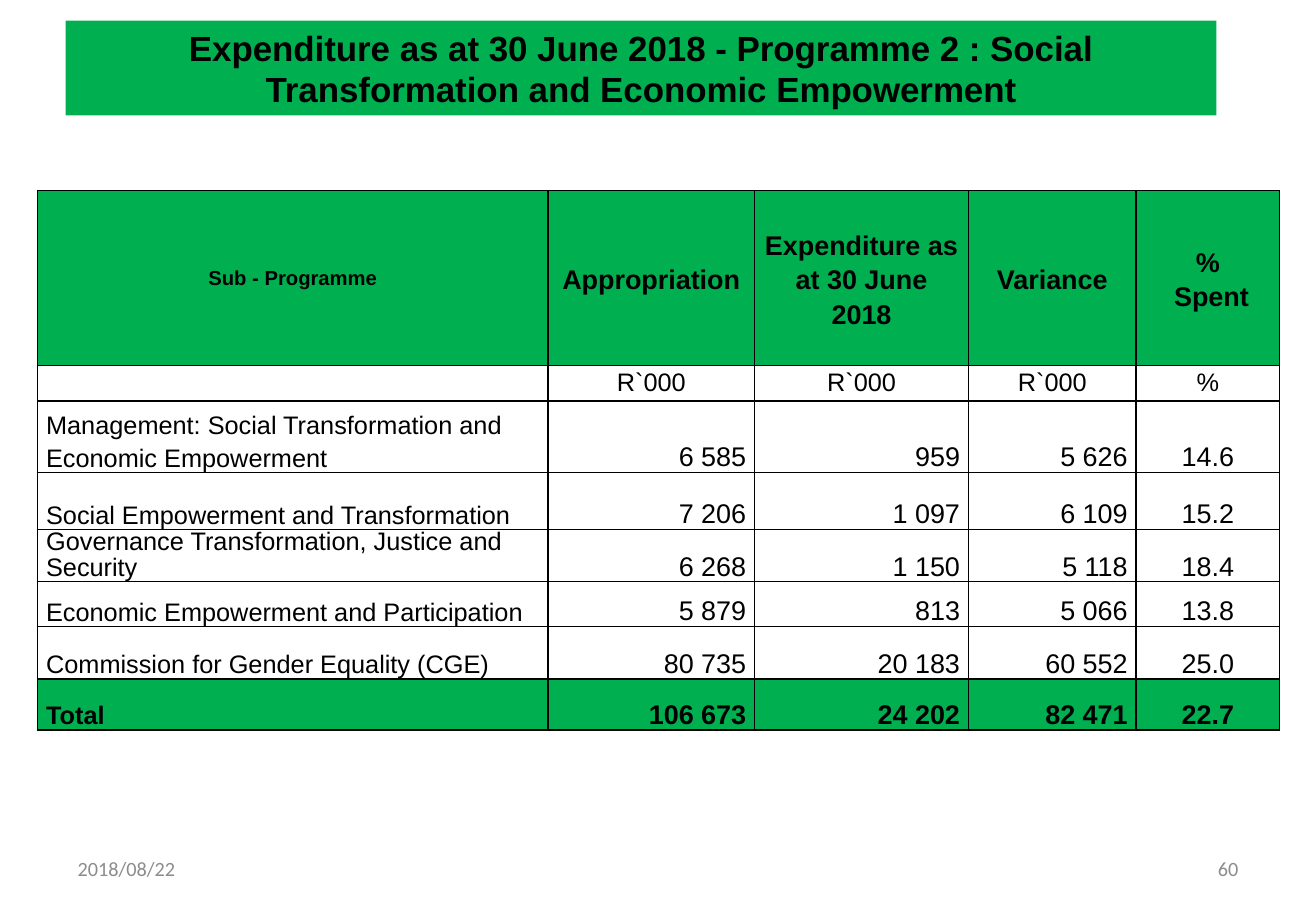
from dataclasses import dataclass
from lxml.etree import SubElement
from pptx import Presentation
from pptx.dml.color import RGBColor
from pptx.enum.text import MSO_ANCHOR, MSO_AUTO_SIZE, PP_ALIGN
from pptx.oxml.ns import qn
from pptx.util import Inches, Pt


@dataclass(frozen=True)
class Theme:
    green: str = "00B050"
    white: str = "FFFFFF"
    black: str = "000000"
    gray: str = "8C8C8C"
    font: str = "Arial"
    foot_font: str = "Calibri"
    title: float = 20.7
    head: float = 16
    label: float = 15
    small: float = 12
    border: float = 1


TITLE = ("Expenditure as at 30 June 2018 - Programme 2 : "
         "Social Transformation and Economic Empowerment")
ROWS = [
    ("Sub - Programme", "Appropriation", "Expenditure as at 30 June 2018", "Variance", "%\n Spent"),
    ("", "R`000", "R`000", "R`000", "%"),
    ("Management: Social Transformation and Economic Empowerment", "6 585", "959", "5 626", "14.6"),
    ("Social Empowerment and Transformation", "7 206", "1 097", "6 109", "15.2"),
    ("Governance Transformation, Justice and Security", "6 268", "1 150", "5 118", "18.4"),
    ("Economic Empowerment and Participation", "5 879", "813", "5 066", "13.8"),
    ("Commission for Gender Equality (CGE)", "80 735", "20 183", "60 552", "25.0"),
    ("Total", "106 673", "24 202", "82 471", "22.7"),
]
WIDTHS = [4.2, 1.7, 1.76, 1.38, 1.18]
HEIGHTS = [1.44, 0.29, 0.59, 0.47, 0.43, 0.37, 0.43, 0.42]
HEAD, UNIT, TOTAL = 0, 1, len(ROWS) - 1
TIGHT = 4


class Deck:
    def __init__(self, theme):
        self.theme = theme
        self.show = Presentation()
        self.show.slide_width = Inches(10.83)
        self.show.slide_height = Inches(7.5)
        self.slide = self.show.slides.add_slide(self.show.slide_layouts[5])

    def place(self, shape, left, top, width, height):
        shape.left, shape.top = Inches(left), Inches(top)
        shape.width, shape.height = Inches(width), Inches(height)

    def paint(self, fill, color):
        fill.solid()
        fill.fore_color.rgb = RGBColor.from_string(color)

    def style(self, frame, size, align, color, font, bold=False, space=None):
        for para in frame.paragraphs:
            para.alignment = align
            para.line_spacing = space
            for run in para.runs:
                run.font.size = Pt(size)
                run.font.name = font
                run.font.bold = bold
                run.font.color.rgb = RGBColor.from_string(color)

    def title(self, text, *box):
        shape = self.slide.shapes.title
        self.place(shape, *box)
        self.paint(shape.fill, self.theme.green)
        frame = shape.text_frame
        frame.text = text
        frame.word_wrap = True
        frame.auto_size = MSO_AUTO_SIZE.NONE
        frame.vertical_anchor = MSO_ANCHOR.MIDDLE
        self.style(frame, self.theme.title, PP_ALIGN.CENTER, self.theme.black, self.theme.font, True)

    def footer(self, text, left, align):
        box = self.slide.shapes.add_textbox(Inches(left), Inches(6.95), Inches(2.53), Inches(0.4))
        frame = box.text_frame
        frame.text = text
        frame.word_wrap = True
        frame.vertical_anchor = MSO_ANCHOR.MIDDLE
        self.style(frame, self.theme.small, align, self.theme.gray, self.theme.foot_font)

    def edge(self, cell):
        props = cell._tc.get_or_add_tcPr()
        for side in ("a:lnL", "a:lnR", "a:lnT", "a:lnB"):
            line = SubElement(props, qn(side), w=str(Pt(self.theme.border)))
            fill = SubElement(line, qn("a:solidFill"))
            SubElement(fill, qn("a:srgbClr"), val=self.theme.black)

    def cell(self, cell, text, row, col):
        theme = self.theme
        top = row <= UNIT
        size = theme.label if row == UNIT or col == 0 else theme.head
        align = PP_ALIGN.CENTER if top or col == 4 else PP_ALIGN.RIGHT
        space = None if row == UNIT else 1.15
        if col == 0:
            if row == HEAD:
                size, space = theme.small, None
            else:
                align = PP_ALIGN.LEFT
                if row >= TIGHT:
                    space = Pt(15.1)
        cell.margin_left = cell.margin_right = Inches(0.07)
        cell.margin_top = Inches(0.01 if col == 0 and not top else 0)
        cell.margin_bottom = 0
        cell.vertical_anchor = MSO_ANCHOR.MIDDLE if top else MSO_ANCHOR.BOTTOM
        frame = cell.text_frame
        frame.text = text
        self.style(frame, size, align, theme.black, theme.font, row in (HEAD, TOTAL), space)
        if not text:
            SubElement(frame.paragraphs[0]._p, qn("a:endParaRPr"), sz=str(int(size * 100)))
        self.edge(cell)
        self.paint(cell.fill, theme.green if row in (HEAD, TOTAL) else theme.white)

    def table(self, rows, widths, heights, left, top):
        frame = self.slide.shapes.add_table(
            len(rows), len(widths), Inches(left), Inches(top),
            Inches(sum(widths)), Inches(sum(heights)))
        table = frame.table
        table.first_row = table.horz_banding = False
        for column, width in zip(table.columns, widths):
            column.width = Inches(width)
        for line, height in zip(table.rows, heights):
            line.height = Inches(height)
        for row, texts in enumerate(rows):
            for col, text in enumerate(texts):
                self.cell(table.cell(row, col), text, row, col)


def main():
    deck = Deck(Theme())
    deck.title(TITLE, 0.54, 0.17, 9.47, 0.78)
    deck.table(ROWS, WIDTHS, HEIGHTS, 0.31, 1.57)
    deck.footer("2018/08/22", 0.54, PP_ALIGN.LEFT)
    deck.footer("60", 7.76, PP_ALIGN.RIGHT)
    deck.show.save("out.pptx")


if __name__ == "__main__":
    main()
